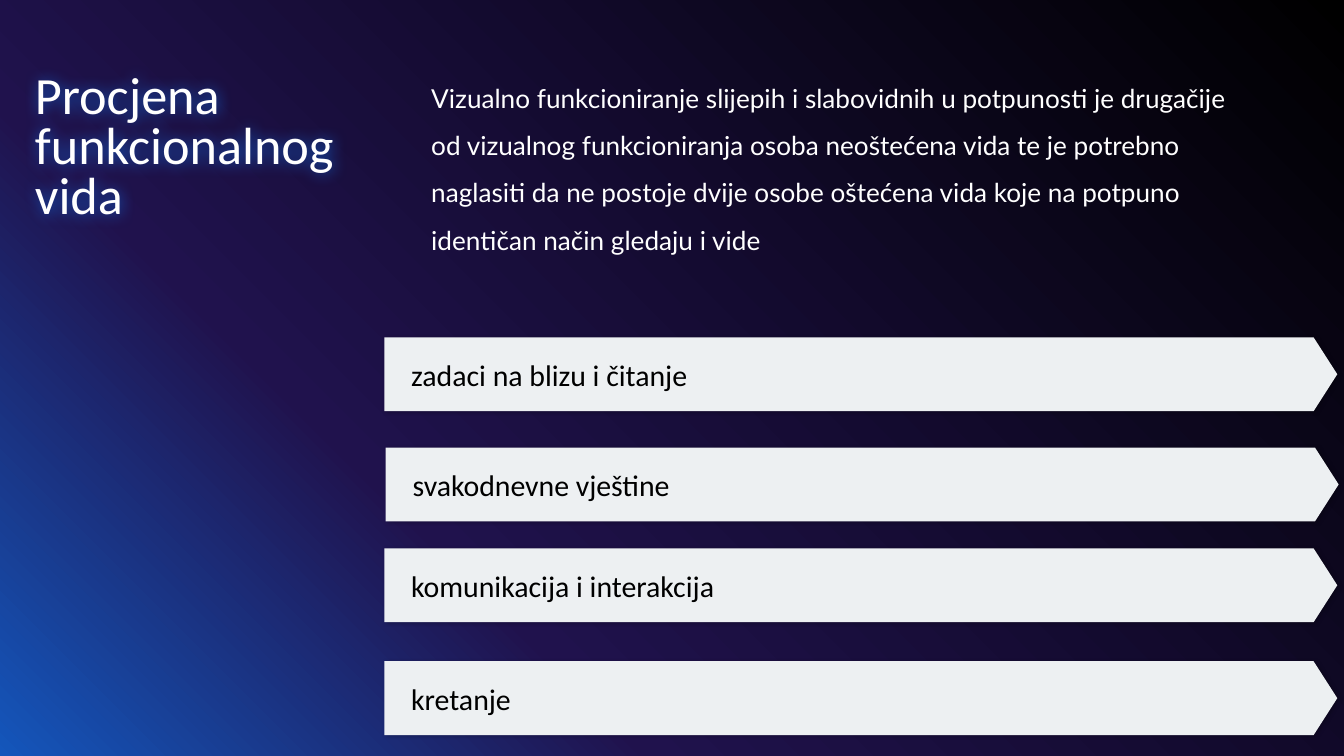
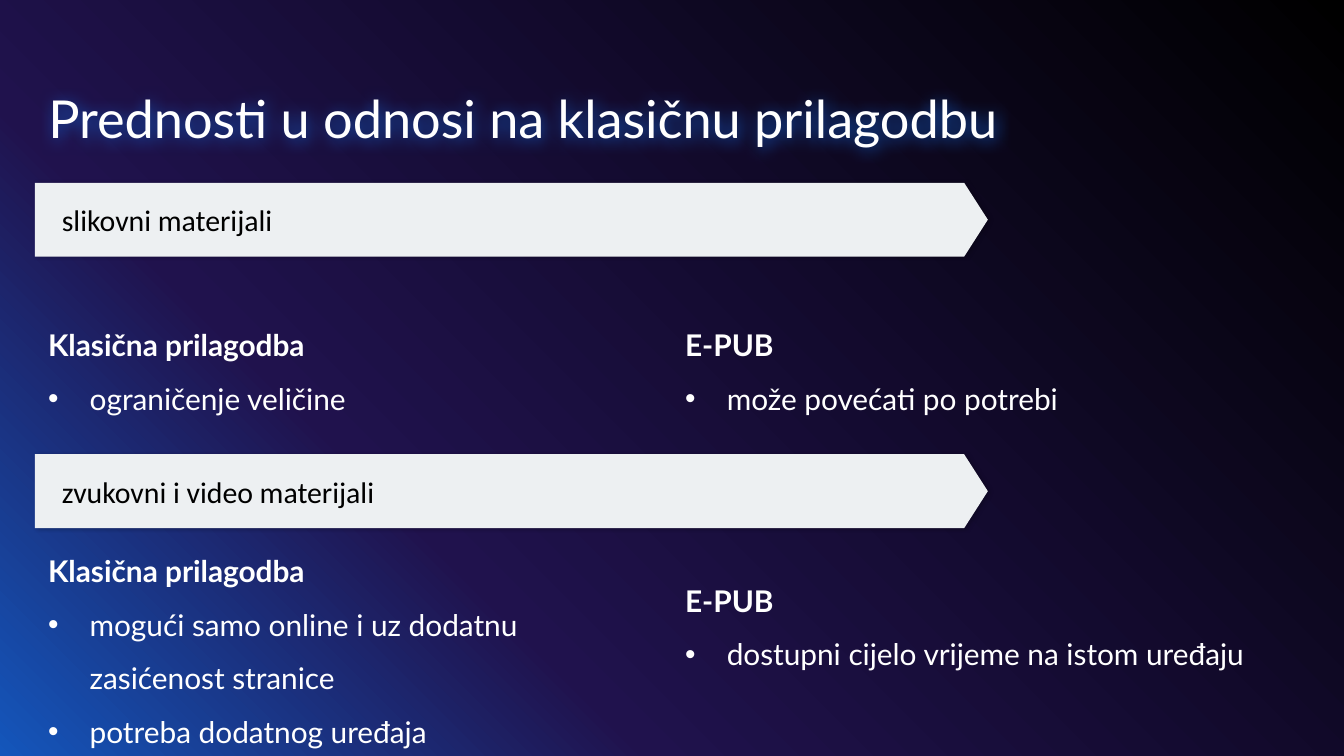
from dataclasses import dataclass

from lxml import etree
from pptx import Presentation
from pptx.dml.color import RGBColor
from pptx.enum.shapes import MSO_SHAPE
from pptx.enum.text import MSO_ANCHOR, MSO_AUTO_SIZE, PP_ALIGN
from pptx.oxml.ns import nsdecls, qn
from pptx.util import Inches, Pt

PENTAGON = MSO_SHAPE.PENTAGON
TOP, MIDDLE = MSO_ANCHOR.TOP, MSO_ANCHOR.MIDDLE
LEFT = PP_ALIGN.LEFT
GROW, FIXED = MSO_AUTO_SIZE.SHAPE_TO_FIT_TEXT, MSO_AUTO_SIZE.NONE

WHITE, BLACK, PALE = "FFFFFF", "000000", "EDF0F2"
BLUE, PURPLE = "1456BB", "20124D"
STOPS = ((0, BLUE), (31, PURPLE), (100, BLACK))
TITLE_ONLY = 5
EDGE, MID, COL_W = 0.26, 5, 4.74
INDENT = Inches(0.31)

TITLE = {"size": Pt(28), "bold": False}
BODY = {"name": "Lato", "size": Pt(14)}
LABEL = {"name": "Calibri", "size": Pt(16)}
HEAD = {"name": "Lato", "size": Pt(16), "bold": True}
ITEM = {"name": "Lato", "size": Pt(16), "bold": False}


@dataclass
class Banner:
    text: str
    left: float
    top: float


@dataclass
class Column:
    head: str
    items: tuple[str, ...]
    left: float
    top: float
    height: float


ROWS = (
    Banner("zadaci na blizu i čitanje", 2.86, 2.51),
    Banner("svakodnevne vještine", 2.87, 3.33),
    Banner("komunikacija i interakcija", 2.86, 4.08),
    Banner("kretanje", 2.86, 4.92),
)
TOPICS = (
    Banner("slikovni materijali", EDGE, 1.36),
    Banner("zvukovni i video materijali", EDGE, 3.38),
)
COLUMNS = (
    Column("Klasična prilagodba", ("ograničenje veličine",), EDGE, 2.25, 1.68),
    Column("E-PUB", ("može povećati po potrebi",), MID, 2.25, 0.87),
    Column(
        "Klasična prilagodba",
        (
            "mogući samo online i uz dodatnu zasićenost stranice",
            "potreba dodatnog uređaja",
        ),
        EDGE, 3.93, 2.49,
    ),
    Column("E-PUB", ("dostupni cijelo vrijeme na istom uređaju",), MID, 4.15, 1.28),
)
INTRO = (
    "Vizualno funkcioniranje slijepih i slabovidnih u potpunosti je drugačije "
    "od vizualnog funkcioniranja osoba neoštećena vida te je potrebno naglasiti "
    "da ne postoje dvije osobe oštećena vida koje na potpuno identičan način "
    "gledaju i vide"
)


def rgb(code: str) -> RGBColor:
    return RGBColor.from_string(code)


def apply(target, values: dict) -> None:
    for key, value in values.items():
        setattr(target, key, value)


def style(font, values: dict, color: str) -> None:
    font.color.rgb = rgb(color)
    apply(font, values)


def xml(body: str):
    """Parse one drawing element, adding its namespace."""
    tag, rest = body.split(" ", 1)
    return etree.fromstring(f"{tag} {nsdecls('a')} {rest}")


def set_back(master) -> None:
    """Give the master a gradient that spreads from the lower left corner."""
    master.background.fill.solid()
    stops = "".join(
        f'<a:gs pos="{pos * 1000}"><a:srgbClr val="{color}"/></a:gs>'
        for pos, color in STOPS
    )
    grad = xml(
        f'<a:gradFill rotWithShape="1"><a:gsLst>{stops}</a:gsLst>'
        '<a:path path="circle"><a:fillToRect t="100000" r="100000"/></a:path>'
        "</a:gradFill>"
    )
    solid = master.element.xpath(".//p:bgPr/a:solidFill")[0]
    solid.getparent().replace(solid, grad)


def add_shadow(shape, color: str, alpha: int, blur: float, dist: float, turn: int) -> None:
    shape.shadow.inherit = False
    shape.element.spPr.find(qn("a:effectLst")).append(xml(
        f'<a:outerShdw blurRad="{Pt(blur)}" dist="{Pt(dist)}" dir="{turn * 60000}">'
        f'<a:srgbClr val="{color}"><a:alpha val="{alpha * 1000}"/></a:srgbClr>'
        "</a:outerShdw>"
    ))


def add_title(slide, text: str, face: str, box: tuple[float, ...]) -> None:
    title = slide.shapes.title
    title.left, title.top, title.width, title.height = map(Inches, box)
    add_shadow(title, BLUE, 100, 8, 1, 45)
    frame = title.text_frame
    apply(frame, {
        "text": text, "word_wrap": True, "auto_size": FIXED,
        "vertical_anchor": TOP, "margin_left": Inches(0.1),
        "margin_right": Inches(0.1), "margin_top": Inches(0.1),
        "margin_bottom": Inches(0.1),
    })
    para = frame.paragraphs[0]
    apply(para, {"alignment": LEFT, "line_spacing": 0.8})
    for run in para.runs:
        style(run.font, TITLE | {"name": face}, WHITE)


def add_banner(slide, item: Banner) -> None:
    shape = slide.shapes.add_shape(
        PENTAGON, Inches(item.left), Inches(item.top), Inches(7.09), Inches(0.55)
    )
    shape.adjustments[0] = 0.32
    shape.fill.solid()
    shape.fill.fore_color.rgb = rgb(PALE)
    shape.line.fill.background()
    add_shadow(shape, BLACK, 20, 2.2, 0.8, 0)
    frame = shape.text_frame
    apply(frame, {
        "text": item.text, "word_wrap": True, "vertical_anchor": MIDDLE,
        "margin_left": Inches(0.2), "margin_right": 0,
        "margin_top": 0, "margin_bottom": 0,
    })
    para = frame.paragraphs[0]
    para.alignment = LEFT
    style(para.runs[0].font, LABEL, BLACK)


def add_frame(slide, left: float, top: float, width: float, height: float):
    box = slide.shapes.add_textbox(*map(Inches, (left, top, width, height)))
    apply(box.text_frame, {"word_wrap": True, "auto_size": GROW})
    return box.text_frame


def fill_para(para, text: str, values: dict) -> None:
    para.line_spacing = 1.5
    run = para.add_run()
    run.text = text
    style(run.font, values, WHITE)


def add_column(slide, col: Column) -> None:
    frame = add_frame(slide, col.left, col.top, COL_W, col.height)
    fill_para(frame.paragraphs[0], col.head, HEAD)
    for text in col.items:
        para = frame.add_paragraph()
        fill_para(para, text, ITEM)
        props = para._p.get_or_add_pPr()
        props.set("marL", str(INDENT))
        props.set("indent", str(-INDENT))
        props.append(xml(f'<a:buClr ><a:srgbClr val="{WHITE}"/></a:buClr>'))
        props.append(xml('<a:buFont typeface="Arial"/>'))
        props.append(xml('<a:buChar char="•"/>'))


def add_vision(prs) -> None:
    slide = prs.slides.add_slide(prs.slide_layouts[TITLE_ONLY])
    add_title(slide, "Procjena\vfunkcionalnog\vvida", "Calibri",
              (0.16, 0.45, 3.45, 4.35))
    fill_para(add_frame(slide, 3.11, 0.45, 6.35, 1.48).paragraphs[0], INTRO, BODY)
    for row in ROWS:
        add_banner(slide, row)


def add_gains(prs) -> None:
    slide = prs.slides.add_slide(prs.slide_layouts[TITLE_ONLY])
    add_title(slide, "Prednosti u odnosi na klasičnu prilagodbu", "Lato",
              (EDGE, 0.63, 9.48, 0.57))
    for topic in TOPICS:
        add_banner(slide, topic)
    for col in COLUMNS:
        add_column(slide, col)


def main() -> None:
    prs = Presentation()
    prs.slide_width = Inches(10)
    prs.slide_height = prs.slide_width * 9 // 16
    set_back(prs.slide_master)
    add_vision(prs)
    add_gains(prs)
    prs.save("out.pptx")


if __name__ == "__main__":
    main()
